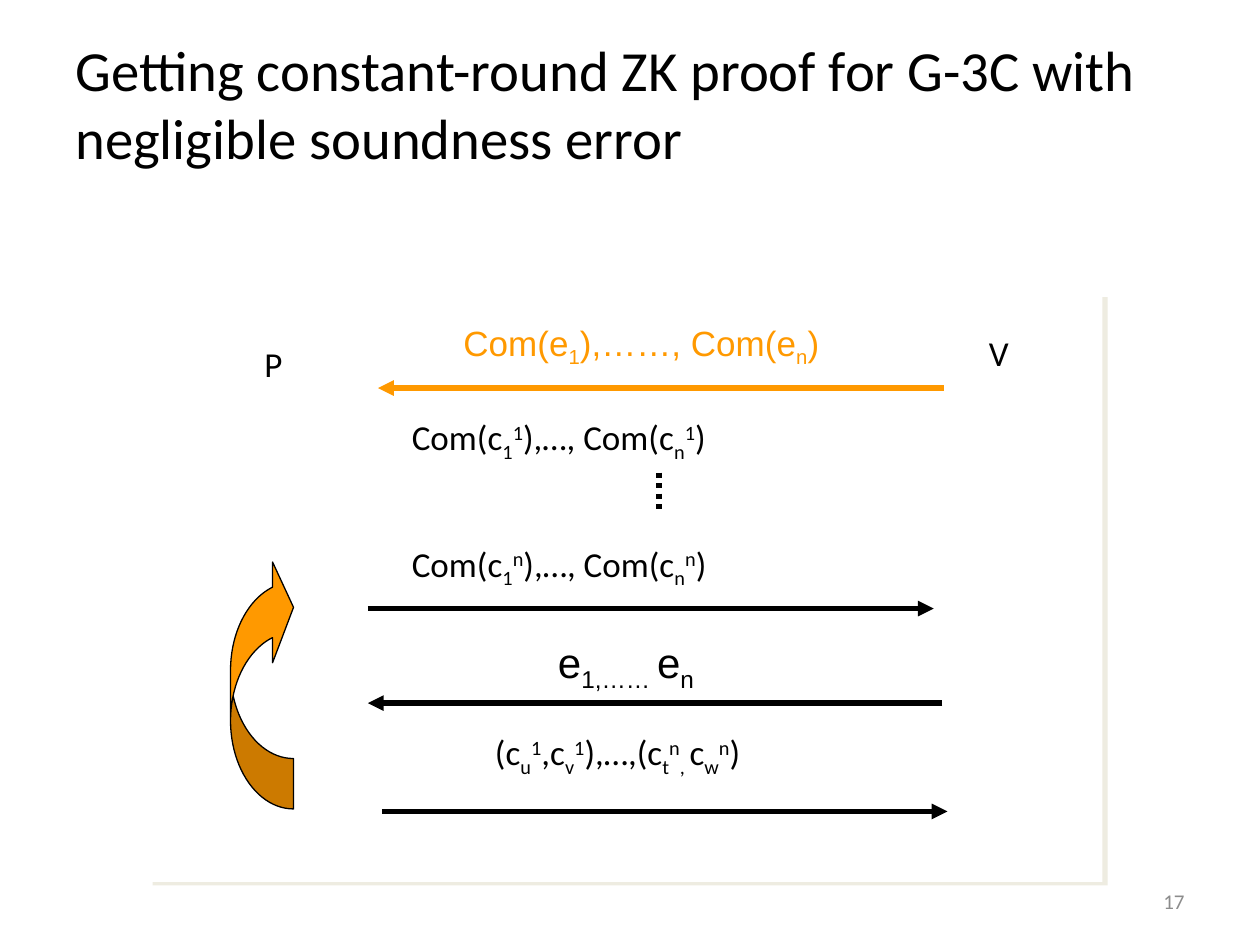
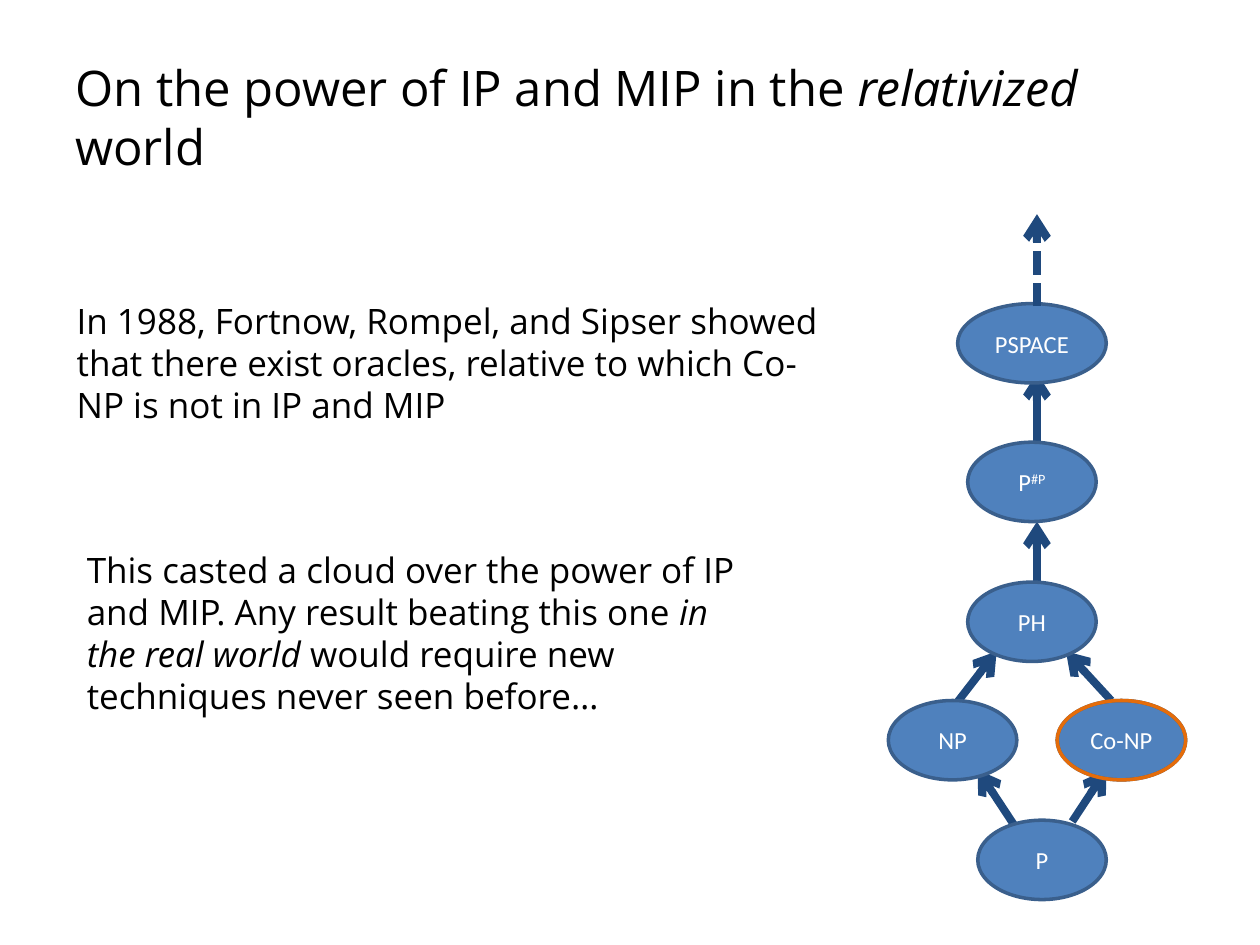
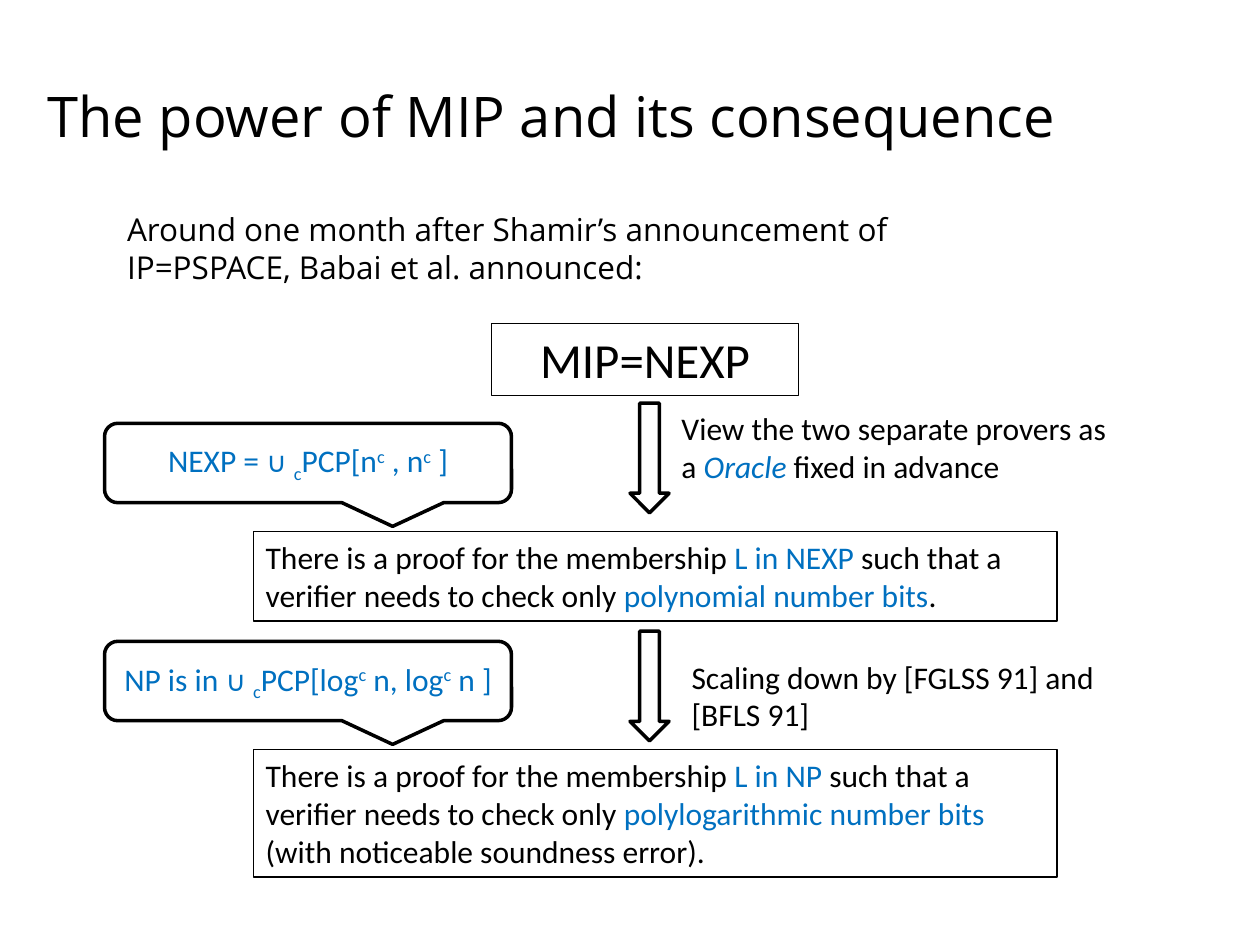
from lxml.etree import SubElement
from pptx import Presentation
from pptx.dml.color import RGBColor
from pptx.enum.dml import MSO_LINE
from pptx.enum.shapes import MSO_CONNECTOR, MSO_SHAPE
from pptx.enum.text import MSO_ANCHOR, PP_ALIGN
from pptx.oxml.ns import qn
from pptx.util import Inches, Pt

COLORS = {
    "black": "000000", "white": "FFFFFF", "gray": "8C8C8C", "cream": "EEECE1",
    "amber": "FF9900", "navy": "1F497D", "blue": "4F81BD", "edge": "3A5F8C",
    "orange": "E46C0A", "accent": "0070C0",
}
BASELINES = {"_": "-25000", "^": "30000"}
MARKS = {
    "_": {}, "^": {}, "*": {"italic": True}, "~": {"color": "accent"},
    "+": {"italic": True, "color": "accent"}, "-": {"size": 16},
}
CALIBRI = {"name": "Calibri", "size": 18, "color": "black"}
BODY = CALIBRI | {"size": 20}
ARIAL = BODY | {"name": "Arial"}
OPEN = CALIBRI | {"name": "Open Sans"}
NODE = CALIBRI | {"size": 14, "color": "white"}
ACCENT = CALIBRI | {"color": "accent"}
LEFT, CENTER, RIGHT = PP_ALIGN.LEFT, PP_ALIGN.CENTER, PP_ALIGN.RIGHT
TOP, MIDDLE = MSO_ANCHOR.TOP, MSO_ANCHOR.MIDDLE


def place(slide, box, text="", style=BODY, kind=None, fill=None, line=None,
          width=0.75, align=LEFT, anchor=TOP, gap=0):
    area = [Inches(value) for value in box]
    if kind is None:
        item = slide.shapes.add_textbox(*area)
    else:
        item = slide.shapes.add_shape(kind, *area)
        item.shadow.inherit = False
        if fill:
            item.fill.solid()
            item.fill.fore_color.rgb = RGBColor.from_string(COLORS[fill])
        else:
            item.fill.background()
        if line:
            item.line.color.rgb = RGBColor.from_string(COLORS[line])
            item.line.width = Pt(width)
        else:
            item.line.fill.background()
    frame = item.text_frame
    frame.word_wrap = True
    frame.vertical_anchor = anchor
    for index, content in enumerate(text.split("\n") if text else []):
        paragraph = frame.add_paragraph() if index else frame.paragraphs[0]
        paragraph.alignment = align
        paragraph.space_before = Pt(gap if index else 0)
        for piece in content.split("|"):
            mark = piece[0] if piece[0] in MARKS else ""
            run = paragraph.add_run()
            run.text = piece[len(mark):]
            values = style | MARKS.get(mark, {})
            run.font.color.rgb = RGBColor.from_string(COLORS[values["color"]])
            formats = values | {"size": Pt(values["size"])}
            del formats["color"]
            for name, value in formats.items():
                setattr(run.font, name, value)
            if mark in BASELINES:
                run._r.get_or_add_rPr().set("baseline", BASELINES[mark])
    return item


def connect(slide, start, end, color="black", width=3, head="triangle", dash=None):
    link = slide.shapes.add_connector(
        MSO_CONNECTOR.STRAIGHT, *[Inches(value) for value in start + end])
    link.line.color.rgb = RGBColor.from_string(COLORS[color])
    link.line.width = Pt(width)
    if dash:
        link.line.dash_style = dash
    if head:
        SubElement(link.line._get_or_add_ln(), qn("a:tailEnd"), type=head)
    SubElement(link._element.spPr, qn("a:effectLst"))


deck = Presentation()
deck.slide_width, deck.slide_height = Inches(10), Inches(7.5)
protocol, relativized, power = [
    deck.slides.add_slide(deck.slide_layouts[6]) for _ in range(3)]

titles = [
    (protocol, (0.5, 0.3, 8.92, 1.03), CALIBRI | {"size": 32.4},
     "Getting constant-round ZK proof for G-3C with negligible soundness error"),
    (relativized, (0.5, 0.3, 9, 1.25), OPEN | {"size": 28},
     "On the power of IP and MIP in the |*relativized| world"),
    (power, (0.28, 0.29, 9, 1.25), OPEN | {"size": 32},
     "The power of MIP and its consequence"),
]
for slide, box, style, title in titles:
    place(slide, box, title, style, anchor=MIDDLE)

place(protocol, (7.17, 6.95, 2.33, 0.4), "17",
      CALIBRI | {"size": 12, "color": "gray"}, align=RIGHT, anchor=MIDDLE)
panel = place(protocol, (1.17, 2.33, 7.58, 4.67), kind=MSO_SHAPE.RECTANGLE, fill="white")
shadow = SubElement(panel._element.spPr.find(qn("a:effectLst")), qn("a:outerShdw"),
                    dist=str(Pt(3.6)), dir=str(34 * 60000), algn="ctr", rotWithShape="0")
SubElement(shadow, qn("a:srgbClr"), val=COLORS["cream"])

messages = [
    ((3.58, 2.5, 3.17, 0.43), "Com(e|_1|),……, Com(e|_n|)", ARIAL | {"color": "amber"}),
    ((4.33, 5, 1.5, 0.5), "e|_1,…… |e|_n", ARIAL | {"size": 24}),
    ((2, 2.67, 0.92, 0.43), "P", BODY),
    ((7.75, 2.58, 0.75, 0.43), "V", BODY),
    ((3.17, 3.25, 4, 1.43),
     "Com(c|_1|^1|),…, Com(c|_n|^1|)\nCom(c|_1|^n|),…, Com(c|_n|^n|)", BODY),
    ((3.83, 5.75, 2.92, 0.43),
     "(c|_u|^1|,c|_v|^1|),…,(c|_t|^n|_, |c|_w|^n|)", BODY),
]
for box, message, style in messages:
    place(protocol, box, message, style, gap=45)
for start, end, y, color in [
    (7.49, 3, 3.08, "amber"), (2.92, 7.41, 4.83, "black"),
    (7.48, 2.92, 5.58, "black"), (3.03, 7.52, 6.44, "black"),
]:
    connect(protocol, (start, y), (end, y), color)
connect(protocol, (5.23, 3.75), (5.23, 4.08), head=None, dash=MSO_LINE.ROUND_DOT)
rewind = place(protocol, (1.08, 5.17, 2, 0.5), kind=MSO_SHAPE.CURVED_DOWN_ARROW,
               fill="amber", line="black")
rewind.rotation = 270
for index, value in enumerate((0.8, 1.6, 0.333)):
    rewind.adjustments[index] = value

place(relativized, (0.51, 2.25, 6.22, 1.25),
      "In 1988, Fortnow, Rompel, and Sipser showed that there exist oracles, "
      "relative to which Co-NP is not in IP and MIP",
      OPEN | {"size": 20}, anchor=MIDDLE)
place(relativized, (0.59, 4.3, 5.51, 1.45),
      "This casted a cloud over the power of IP and MIP. Any result beating this one "
      "|*in the real world |would require new techniques never seen before…",
      OPEN | {"size": 20})
for start, end in [
    ((8.51, 6.52), (8.78, 6.11)), ((7.6, 5.57), (7.91, 5.17)),
    ((8.82, 5.56), (8.46, 5.17)), ((8.23, 4.63), (8.23, 4.14)),
    ((8.23, 3.53), (8.23, 2.96)), ((8.07, 6.58), (7.76, 6.11)),
]:
    connect(relativized, start, end, "navy", 4.5, "arrow")
for x, y, width, complexity in [
    (8.39, 5.56, 1.02, "Co-NP"), (7.68, 4.62, 1.02, "PH"), (7.05, 5.56, 1.02, "NP"),
    (7.76, 6.51, 1.02, "P"), (7.68, 3.51, 1.02, "P|^#P"), (7.6, 2.41, 1.18, "PSPACE"),
]:
    place(relativized, (x, y, width, 0.63), complexity, NODE, MSO_SHAPE.OVAL,
          "blue", "edge", 2, CENTER, MIDDLE)
connect(relativized, (8.23, 2.43), (8.23, 1.7), "navy", 4.5, "arrow", MSO_LINE.SQUARE_DOT)
place(relativized, (8.39, 5.56, 1.02, 0.63), kind=MSO_SHAPE.OVAL, line="orange", width=2)

place(power, (0.91, 1.62, 6.85, 0.71),
      "Around one month after Shamir’s announcement of IP=PSPACE, Babai et al. announced:",
      OPEN)
place(power, (3.9, 2.57, 2.44, 0.57), "MIP=NEXP", CALIBRI | {"size": 28},
      MSO_SHAPE.RECTANGLE, line="black", align=CENTER)
steps = [
    (3.2, (5.31, 3.2, 3.62, 0.71),
     "View the two separate provers as a |+Oracle| fixed in advance",
     (2.01, 4.22, 6.38, 0.71),
     "There is a proof for the membership |~L in NEXP |such that a verifier needs "
     "to check only |~polynomial number bits|.",
     3.36, "NEXP = |-∪| |_c|PCP[n|^c| , n|^c| ]"),
    (5.01, (5.39, 5.17, 3.62, 0.71),
     "Scaling down by [FGLSS 91] and [BFLS 91]",
     (2.01, 5.95, 6.38, 1.01),
     "There is a proof for the membership |~L in NP |such that a verifier needs "
     "to check only |~polylogarithmic number bits |(with noticeable soundness error).",
     5.09, "NP is in |-∪| |_c|PCP[log|^c| n, log|^c| n ]"),
]
for arrow_top, reason_box, reason, claim_box, claim, formula_top, formula in steps:
    place(power, (5, arrow_top, 0.31, 0.87), kind=MSO_SHAPE.DOWN_ARROW,
          fill="white", line="black", width=2)
    place(power, reason_box, reason, CALIBRI)
    place(power, claim_box, claim, CALIBRI, MSO_SHAPE.RECTANGLE, line="black")
    callout = place(power, (0.83, formula_top, 3.23, 0.63), formula, ACCENT,
                    MSO_SHAPE.ROUNDED_RECTANGULAR_CALLOUT, "white", "black", 2,
                    CENTER, MIDDLE)
    for index, value in enumerate((0.208, 0.799, 0.167)):
        callout.adjustments[index] = value

deck.save("out.pptx")
